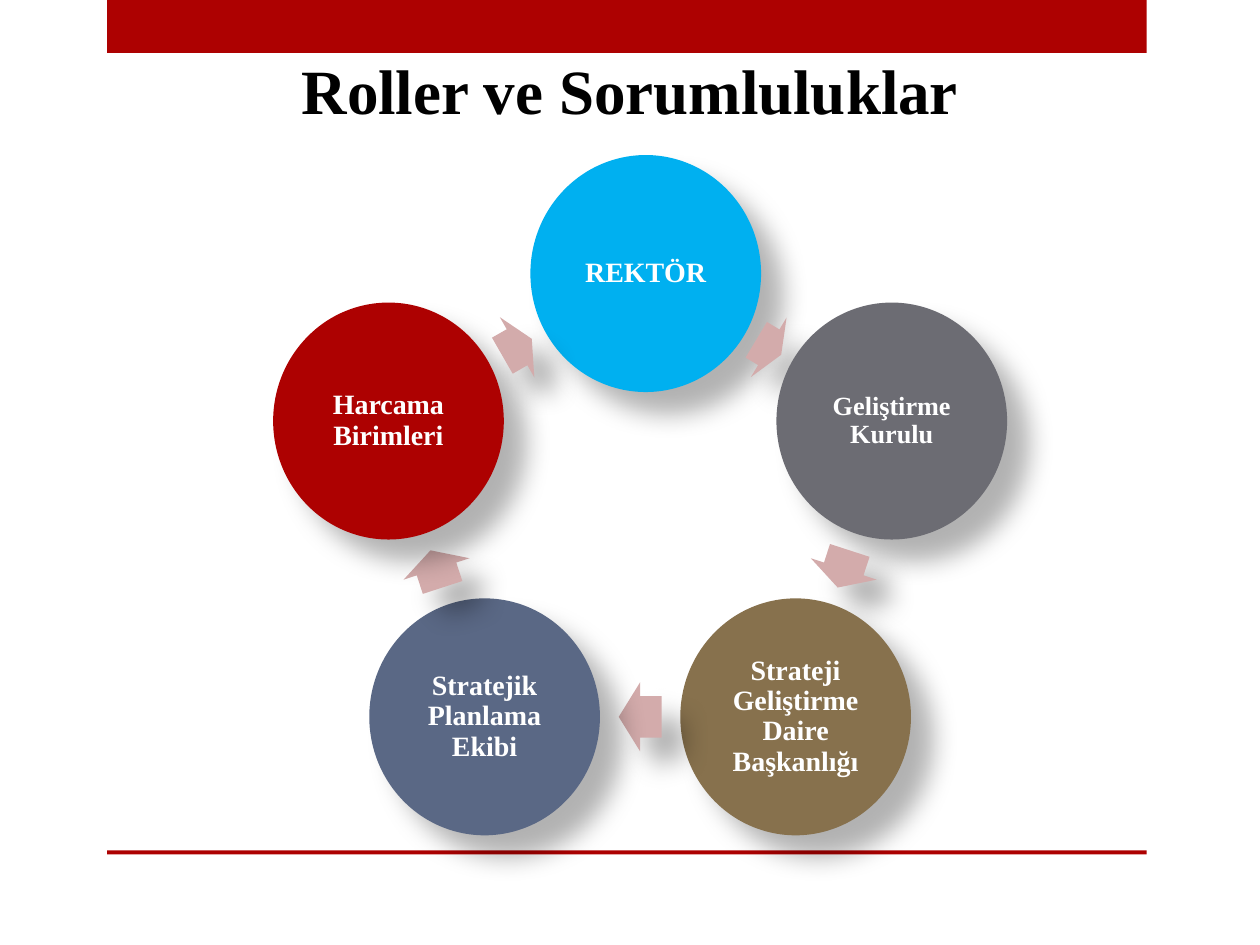
from math import atan2, cos, degrees, radians, sin

from lxml import etree
from pptx import Presentation
from pptx.dml.color import RGBColor
from pptx.enum.shapes import MSO_SHAPE
from pptx.enum.text import MSO_ANCHOR, MSO_AUTO_SIZE, PP_ALIGN
from pptx.oxml.ns import qn
from pptx.util import Pt

RECTANGLE, OVAL, ARROW = MSO_SHAPE.RECTANGLE, MSO_SHAPE.OVAL, MSO_SHAPE.RIGHT_ARROW
CENTER, MIDDLE = PP_ALIGN.CENTER, MSO_ANCHOR.MIDDLE
GROW = MSO_AUTO_SIZE.SHAPE_TO_FIT_TEXT

FONT = "Times New Roman"
COLORS = {
    "red": "AD0101", "blue": "00B0F0", "gray": "6C6C73", "brown": "87714D",
    "slate": "5A6885", "pink": "D3ABAB", "white": "FFFFFF", "black": "000000",
}

TITLE = "Roller ve Sorumluluklar"
# Clockwise from the top: text, colour, text size, length of the arrow to the next role
ROLES = [
    ("REKTÖR", "blue", 16, 16.6),
    ("Geliştirme Kurulu", "gray", 15, 22.3),
    ("Strateji Geliştirme Daire Başkanlığı", "brown", 16, 24.5),
    ("Stratejik Planlama Ekibi", "slate", 16, 22.3),
    ("Harcama Birimleri", "red", 16, 19.4),
]
BARS = [(0, 30.2), (486, 2.2)]  # top, height

RING_X, RING_Y, RING_RADIUS = 365.8, 287.3, 151.2
TOP_SHIFT = (3.2, 20.2)  # the first circle sits lower than the ring
CIRCLE_WIDTH, CIRCLE_HEIGHT = 131.8, 135.4
ARROW_HEIGHT = 39.6
INSET = 1.44


def color(name):
    return RGBColor.from_string(COLORS[name])


def add_filled(slide, kind, left, top, width, height, fill):
    shape = slide.shapes.add_shape(kind, Pt(left), Pt(top), Pt(width), Pt(height))
    shape.fill.solid()
    shape.fill.fore_color.rgb = color(fill)
    shape.line.fill.background()
    shape.shadow.inherit = False
    return shape


def add_centered(slide, kind, center, width, height, fill):
    left, top = center[0] - width / 2, center[1] - height / 2
    return add_filled(slide, kind, left, top, width, height, fill)


def add_soft_shadow(shape):
    effects = shape.element.spPr.find(qn("a:effectLst"))
    shadow = etree.SubElement(
        effects, qn("a:outerShdw"), blurRad=str(Pt(15)), dist=str(Pt(18)),
        dir=str(45 * 60000), algn="tl", rotWithShape="0")
    shade = etree.SubElement(shadow, qn("a:srgbClr"), val=COLORS["black"])
    etree.SubElement(shade, qn("a:alpha"), val="30000")


def write(frame, text, size, font_color):
    frame.word_wrap = True
    paragraph = frame.paragraphs[0]
    paragraph.alignment = CENTER
    run = paragraph.add_run()
    run.text = text
    run.font.name = FONT
    run.font.size = Pt(size)
    run.font.bold = True
    run.font.color.rgb = color(font_color)
    return paragraph


def add_role(slide, center, text, fill, size):
    circle = add_centered(slide, OVAL, center, CIRCLE_WIDTH, CIRCLE_HEIGHT, fill)
    add_soft_shadow(circle)
    frame = circle.text_frame
    frame.vertical_anchor = MIDDLE
    frame.margin_left = frame.margin_right = Pt(INSET)
    frame.margin_top = frame.margin_bottom = Pt(INSET)
    write(frame, text, size, "white").line_spacing = 0.9


def add_arrow_between(slide, start, end, length):
    middle = ((start[0] + end[0]) / 2, (start[1] + end[1]) / 2)
    arrow = add_centered(slide, ARROW, middle, length, ARROW_HEIGHT, "pink")
    arrow.adjustments[0], arrow.adjustments[1] = 0.6, 0.5
    arrow.rotation = degrees(atan2(end[1] - start[1], end[0] - start[0])) % 360
    add_soft_shadow(arrow)


def ring_centers():
    centers = []
    for index in range(len(ROLES)):
        angle = radians(360 / len(ROLES) * index)
        shift_x, shift_y = (0, 0) if index else TOP_SHIFT
        centers.append((RING_X + RING_RADIUS * sin(angle) + shift_x,
                        RING_Y - RING_RADIUS * cos(angle) + shift_y))
    return centers


def main():
    presentation = Presentation()
    presentation.slide_width, presentation.slide_height = Pt(720), Pt(540)
    slide = presentation.slides.add_slide(presentation.slide_layouts[6])

    for top, height in BARS:
        add_filled(slide, RECTANGLE, 61.2, top, 594, height, "red")

    title = slide.shapes.add_textbox(Pt(54), Pt(25.9), Pt(612), Pt(51))
    title.text_frame.auto_size = GROW
    write(title.text_frame, TITLE, 36, "black")

    centers = ring_centers()
    next_centers = centers[1:] + centers[:1]
    for (text, fill, size, length), center, following in zip(ROLES, centers, next_centers):
        add_role(slide, center, text, fill, size)
        add_arrow_between(slide, center, following, length)

    presentation.save("out.pptx")


if __name__ == "__main__":
    main()
